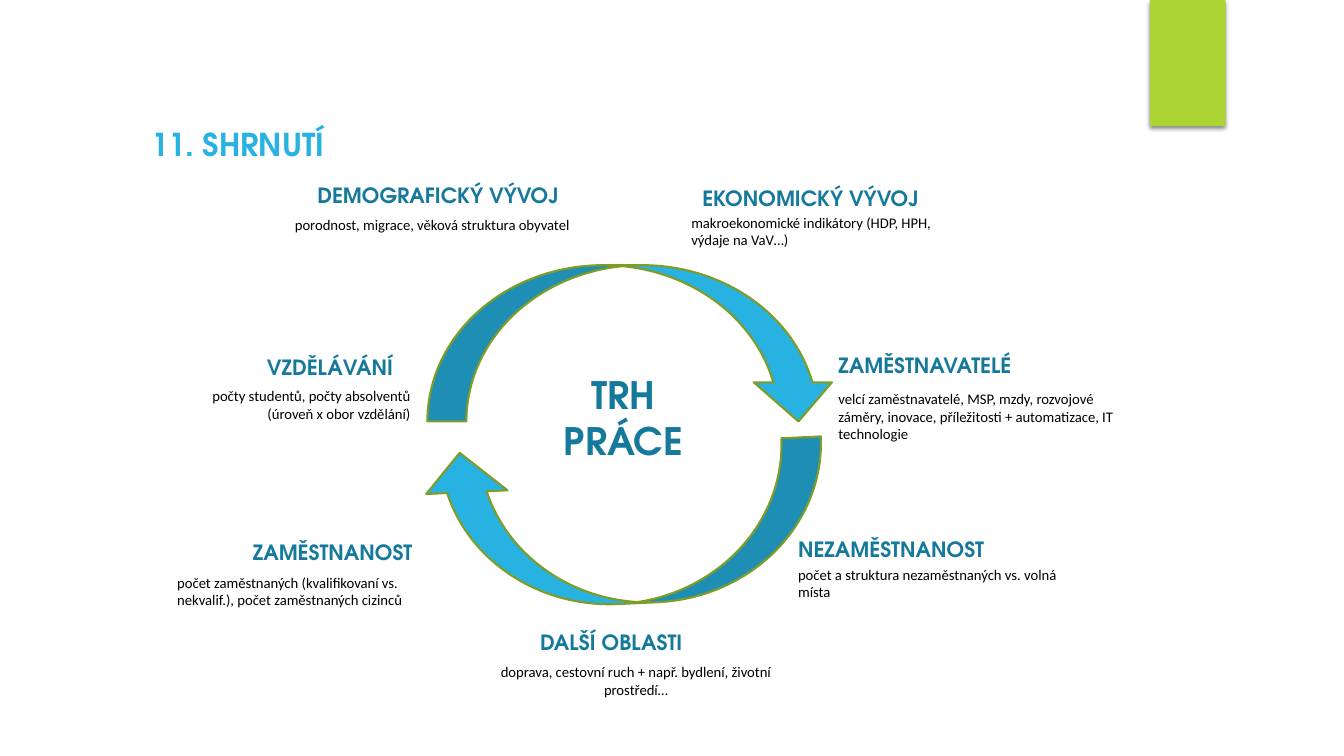
from dataclasses import dataclass

import pptx
import pptx.dml.color
import pptx.enum.shapes
import pptx.enum.text
import pptx.oxml
import pptx.oxml.ns
import pptx.util

Pt = pptx.util.Pt
ALIGN = pptx.enum.text.PP_ALIGN
SHAPES = pptx.enum.shapes.MSO_SHAPE


@dataclass(frozen=True)
class Theme:
    lime: str = "ACD433"
    olive: str = "7F9D26"
    sky: str = "27B2E1"
    teal: str = "15799B"
    black: str = "000000"
    display_font: str = "TeX Gyre Adventor"
    body_font: str = "Calibri"
    title_size: float = 22.5
    center_size: float = 27
    heading_size: float = 15
    caption_size: float = 10.5


THEME = Theme()

# Each topic: heading, heading box, heading alignment,
# caption, caption box, caption alignment, caption indent
TOPICS = [
    ("DEMOGRAFICKÝ VÝVOJ", (186.5, 126.7, 252.7, 32.4), ALIGN.CENTER,
     "porodnost, migrace, věková struktura obyvatel",
     (196.6, 150.5, 217.4, 41), ALIGN.RIGHT, 0),
    ("EKONOMICKÝ VÝVOJ", (467.3, 128.9, 223.2, 54.7), ALIGN.CENTER,
     "makroekonomické indikátory (HDP, HPH, výdaje na VaV…)",
     (450.7, 149, 223.2, 57.6), ALIGN.LEFT, 36),
    ("ZAMĚSTNAVATELÉ", (591.8, 248.4, 177.8, 54.7), ALIGN.LEFT,
     "velcí zaměstnavatelé, MSP, mzdy, rozvojové záměry, inovace, "
     "příležitosti + automatizace, IT technologie",
     (591.8, 275, 229.7, 73.4), ALIGN.LEFT, 0),
    ("NEZAMĚSTNANOST", (563, 379.4, 177.8, 54.7), ALIGN.LEFT,
     "počet a struktura nezaměstnaných vs. volná místa",
     (563, 400.3, 200.2, 57.6), ALIGN.LEFT, 0),
    ("DALŠÍ OBLASTI", (378.7, 446.4, 177.8, 32.4), ALIGN.LEFT,
     "doprava, cestovní ruch + např. bydlení, životní prostředí…",
     (350.6, 470.2, 207.4, 41), ALIGN.CENTER, 0),
    ("ZAMĚSTNANOST", (173.5, 381.6, 159, 54.7), ALIGN.LEFT,
     "počet zaměstnaných (kvalifikovaní vs. nekvalif.), "
     "počet zaměstnaných cizinců",
     (119.5, 406.1, 208.1, 57.6), ALIGN.LEFT, 0),
    ("VZDĚLÁVÁNÍ", (183.6, 249.8, 159, 32.4), ALIGN.LEFT,
     "počty studentů, počty absolventů (úroveň x obor vzdělání)",
     (135.4, 272.9, 164.9, 57.6), ALIGN.RIGHT, 0),
]


def rgb(color):
    return pptx.dml.color.RGBColor.from_string(color)


def points(box):
    return [Pt(length) for length in box]


def write_text(shape, text, *, size, color, font=THEME.display_font, bold=True,
               align=ALIGN.LEFT, indent=0, line_spacing=None):
    shape.text_frame.word_wrap = True
    paragraph = shape.text_frame.paragraphs[0]
    paragraph.alignment = align
    paragraph.line_spacing = line_spacing
    if indent:
        paragraph.level = 1
        properties = paragraph._p.get_or_add_pPr()
        properties.set("marL", str(Pt(indent)))
        properties.set("indent", "0")
    run = paragraph.add_run()
    run.text = text
    run.font.name = font
    run.font.size = Pt(size)
    run.font.bold = bold
    run.font.color.rgb = rgb(color)


def add_text(slide, text, box, **text_format):
    shape = slide.shapes.add_textbox(*points(box))
    write_text(shape, text, **text_format)
    shape.text_frame.auto_size = pptx.enum.text.MSO_AUTO_SIZE.SHAPE_TO_FIT_TEXT


def add_title(slide, text, box):
    title = slide.shapes.title
    title.left, title.top, title.width, title.height = points(box)
    title.text_frame.vertical_anchor = pptx.enum.text.MSO_ANCHOR.MIDDLE
    title.text_frame.auto_size = pptx.enum.text.MSO_AUTO_SIZE.NONE
    write_text(title, text, size=THEME.title_size, color=THEME.sky,
               line_spacing=0.9)


def add_corner_tab(slide, box):
    tab = slide.shapes.add_shape(SHAPES.RECTANGLE, *points(box))
    tab.fill.solid()
    tab.fill.fore_color.rgb = rgb(THEME.lime)
    tab.line.fill.background()
    tab.shadow.inherit = False
    effects = tab._element.spPr.find(pptx.oxml.ns.qn("a:effectLst"))
    effects.append(pptx.oxml.parse_xml(
        f'<a:outerShdw {pptx.oxml.ns.nsdecls("a")} blurRad="{Pt(3)}" '
        f'dist="{Pt(2)}" dir="5400000" rotWithShape="0">'
        f'<a:srgbClr val="{THEME.black}"><a:alpha val="45000"/></a:srgbClr>'
        '</a:outerShdw>'))


def add_cycle_arrow(slide, box, rotation=0, bend=0.5):
    arrow = slide.shapes.add_shape(SHAPES.CURVED_DOWN_ARROW, *points(box))
    arrow.adjustments[1] = bend
    arrow.rotation = rotation
    arrow.fill.solid()
    arrow.fill.fore_color.rgb = rgb(THEME.sky)
    arrow.line.color.rgb = rgb(THEME.olive)
    arrow.line.width = Pt(1.5)
    arrow.shadow.inherit = False


def add_topic(slide, heading, heading_box, heading_align,
              caption, caption_box, caption_align, caption_indent):
    add_text(slide, heading, heading_box, size=THEME.heading_size,
             color=THEME.teal, align=heading_align)
    add_text(slide, caption, caption_box, size=THEME.caption_size,
             color=THEME.black, font=THEME.body_font, bold=False,
             align=caption_align, indent=caption_indent)


def main():
    presentation = pptx.Presentation()
    presentation.slide_width = Pt(960)
    presentation.slide_height = Pt(540)
    title_only = presentation.slide_layouts.get_by_name("Title Only")
    slide = presentation.slides.add_slide(title_only)

    add_title(slide, "11. SHRNUTÍ", (100.8, 82, 337, 44.6))
    add_corner_tab(slide, (821.5, 0, 54, 90))
    add_cycle_arrow(slide, (305.3, 189.4, 293, 111.6))
    add_cycle_arrow(slide, (301.7, 318.2, 287.3, 113), rotation=177.4, bend=0.514)
    add_text(slide, "TRH PRÁCE", (386.6, 262.1, 117.4, 132.5),
             size=THEME.center_size, color=THEME.teal, align=ALIGN.CENTER)
    for topic in TOPICS:
        add_topic(slide, *topic)

    presentation.save("out.pptx")


if __name__ == "__main__":
    main()
